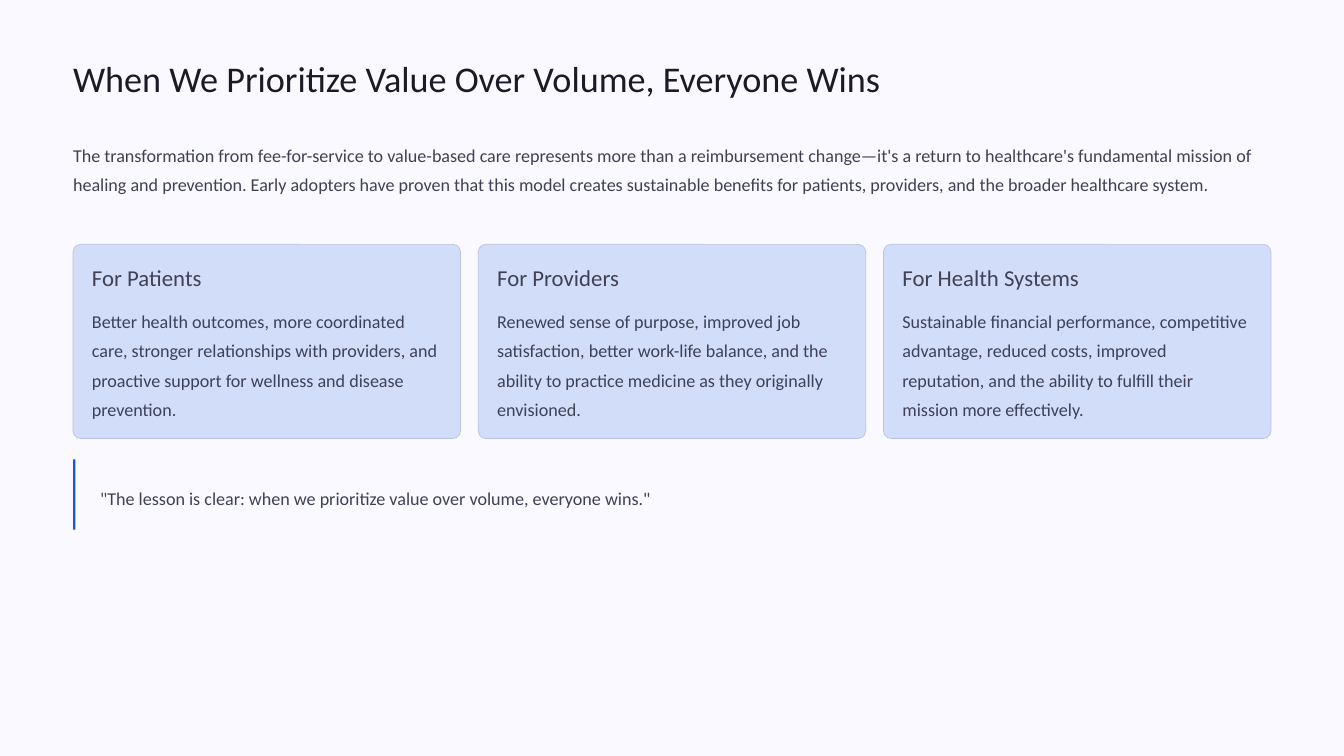
from pptx import Presentation
from pptx.dml.color import RGBColor
from pptx.enum.shapes import MSO_SHAPE
from pptx.enum.text import MSO_ANCHOR, MSO_AUTO_SIZE, PP_ALIGN
from pptx.util import Cm, Pt

RECTANGLE = MSO_SHAPE.RECTANGLE
ROUNDED = MSO_SHAPE.ROUNDED_RECTANGLE
TOP = MSO_ANCHOR.TOP
LEFT = PP_ALIGN.LEFT
NO_AUTOFIT = MSO_AUTO_SIZE.NONE
TITLE_ONLY = 5

FONT = "Calibri"
COLORS = {
    "background": "F9F9FF",
    "title": "1B1B27",
    "text": "404155",
    "card": "D2DDF9",
    "card_line": "B8C3DF",
    "accent": "1B54DA",
}

TITLE = "When We Prioritize Value Over Volume, Everyone Wins"
INTRO = (
    "The transformation from fee-for-service to value-based care represents more than "
    "a reimbursement change—it's a return to healthcare's fundamental mission of healing "
    "and prevention. Early adopters have proven that this model creates sustainable "
    "benefits for patients, providers, and the broader healthcare system."
)
CARDS = [
    ("For Patients",
     "Better health outcomes, more coordinated care, stronger relationships with "
     "providers, and proactive support for wellness and disease prevention."),
    ("For Providers",
     "Renewed sense of purpose, improved job satisfaction, better work-life balance, "
     "and the ability to practice medicine as they originally envisioned."),
    ("For Health Systems",
     "Sustainable financial performance, competitive advantage, reduced costs, improved "
     "reputation, and the ability to fulfill their mission more effectively."),
]
QUOTE = '"The lesson is clear: when we prioritize value over volume, everyone wins."'


def color(name):
    return RGBColor.from_string(COLORS[name])


def write(shape, text, size=15.5, line=25, color_name="text"):
    """Fill a shape with one left-aligned paragraph without margins."""
    frame = shape.text_frame
    frame.auto_size = NO_AUTOFIT
    frame.word_wrap = True
    frame.vertical_anchor = TOP
    frame.margin_left = frame.margin_top = frame.margin_right = frame.margin_bottom = 0
    paragraph = frame.paragraphs[0]
    paragraph.alignment = LEFT
    paragraph.line_spacing = Pt(line)
    run = paragraph.add_run()
    run.text = text
    run.font.name = FONT
    run.font.size = Pt(size)
    run.font.color.rgb = color(color_name)


def add_block(slide, kind, left, top, width, height, fill):
    shape = slide.shapes.add_shape(kind, left, top, width, height)
    shape.shadow.inherit = False
    shape.fill.solid()
    shape.fill.fore_color.rgb = color(fill)
    shape.line.fill.background()
    return shape


def add_title(slide, left, top, width, height):
    title = slide.shapes.title
    title.left, title.top, title.width, title.height = left, top, width, height
    write(title, TITLE, 31, 39, "title")


def add_intro(slide, left, top, width, height):
    write(slide.shapes.add_textbox(left, top, width, height), INTRO)


def add_card(slide, left, top, width, height, heading, body):
    card = add_block(slide, ROUNDED, left, top, width, height, "card")
    card.adjustments[0] = 0.039
    card.line.color.rgb = color("card_line")
    card.line.width = Pt(0.6)

    padding = Cm(0.57)
    inner_left, inner_width = left + padding, width - 2 * padding
    heading_box = slide.shapes.add_textbox(inner_left, top + padding, inner_width, Cm(0.86))
    write(heading_box, heading, 19.5, 24)
    body_top = top + Cm(1.78)
    body_height = top + height - padding - body_top
    write(slide.shapes.add_textbox(inner_left, body_top, inner_width, body_height), body)


def add_cards(slide, left, top, width, height):
    gap = Cm(0.54)
    card_width = (width - gap * (len(CARDS) - 1)) // len(CARDS)
    for index, (heading, body) in enumerate(CARDS):
        card_left = left + index * (card_width + gap)
        add_card(slide, card_left, top, card_width, height, heading, body)


def add_quote(slide, left, top, width, height):
    indent, inset = Cm(0.82), Cm(0.62)
    box = slide.shapes.add_textbox(
        left + indent, top + inset, width - indent, height - 2 * inset)
    write(box, QUOTE)
    add_block(slide, RECTANGLE, left, top, Cm(0.07), height, "accent")


def main():
    presentation = Presentation()
    presentation.slide_width, presentation.slide_height = Cm(40.64), Cm(22.86)
    slide = presentation.slides.add_slide(presentation.slide_layouts[TITLE_ONLY])
    slide.background.fill.solid()
    slide.background.fill.fore_color.rgb = color("background")

    # All regions share the same left edge and width
    left, width = Cm(2.21), Cm(36.22)
    add_title(slide, left, Cm(1.65), width, Cm(1.37))
    add_intro(slide, left, Cm(4.14), width, Cm(2.64))
    add_cards(slide, left, Cm(7.39), width, Cm(5.87))
    add_quote(slide, left, Cm(13.89), width, Cm(2.13))

    presentation.save("out.pptx")


if __name__ == "__main__":
    main()
